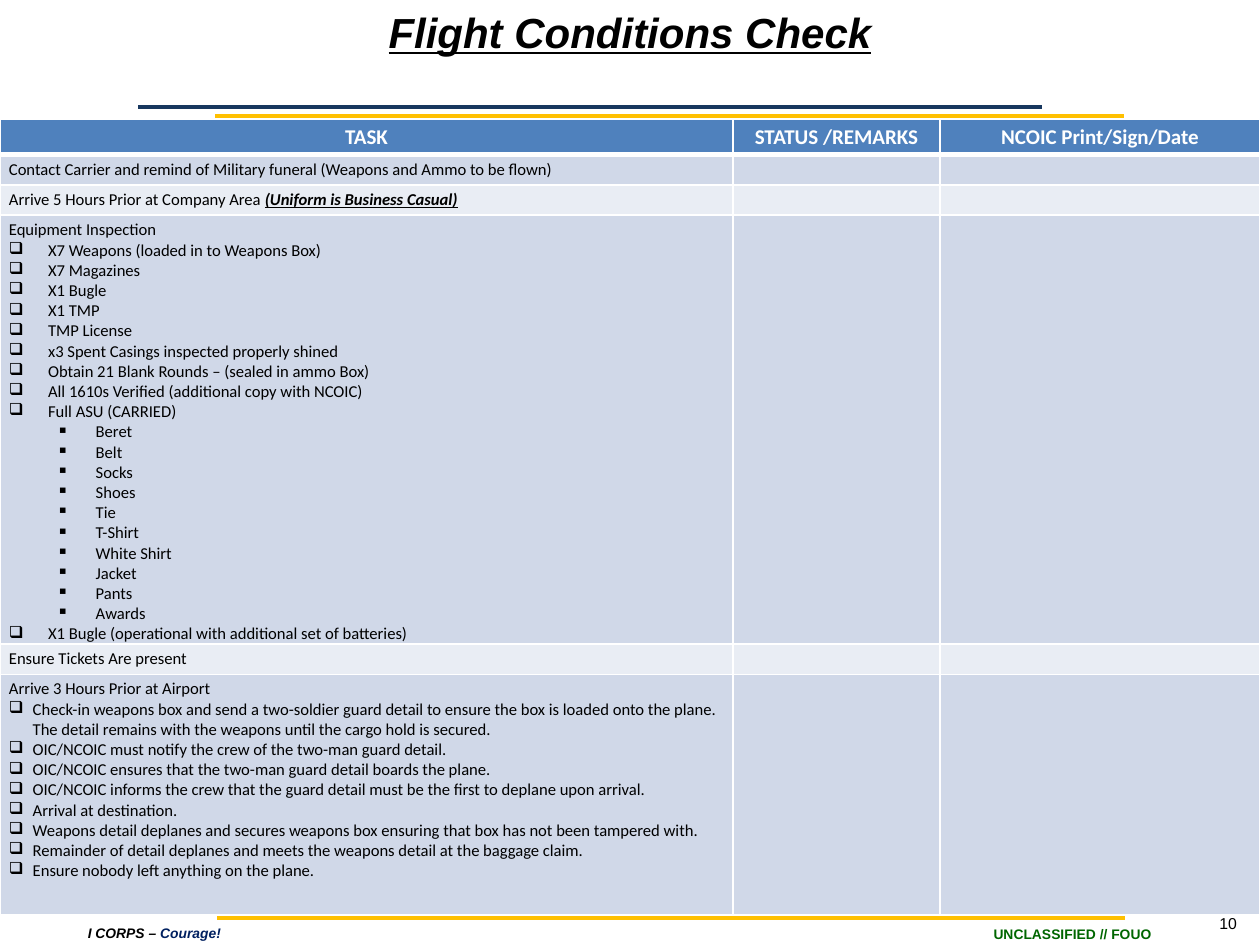
from lxml import etree
from pptx import Presentation
from pptx.dml.color import RGBColor
from pptx.enum.shapes import MSO_CONNECTOR
from pptx.enum.text import MSO_ANCHOR, PP_ALIGN
from pptx.oxml.ns import qn
from pptx.util import Cm, Pt

LINE = MSO_CONNECTOR.STRAIGHT
MIDDLE = MSO_ANCHOR.MIDDLE
LEFT, CENTER = PP_ALIGN.LEFT, PP_ALIGN.CENTER

BLACK = RGBColor(0x00, 0x00, 0x00)
WHITE = RGBColor(0xFF, 0xFF, 0xFF)
NAVY = RGBColor(0x17, 0x37, 0x5E)
GOLD = RGBColor(0xFF, 0xC0, 0x00)
GREEN = RGBColor(0x00, 0x66, 0x00)
INK = RGBColor(0x00, 0x20, 0x60)
BLUE = RGBColor(0x4F, 0x81, 0xBD)
BANDS = [RGBColor(0xD0, 0xD8, 0xE8), RGBColor(0xE9, 0xED, 0xF4)]

TITLE = "Flight Conditions Check"
HEADS = ["TASK", "STATUS /REMARKS", "NCOIC Print/Sign/Date"]

# Each task is a list of (style, text); a trailing third part is emphasised.
KIT = ["X7 Weapons (loaded in to Weapons Box)", "X7 Magazines", "X1 Bugle",
       "X1 TMP", "TMP License", "x3 Spent Casings inspected properly shined",
       "Obtain 21 Blank Rounds – (sealed in ammo Box)",
       "All 1610s Verified (additional copy with NCOIC)",
       "Full ASU (CARRIED)"]
DRESS = ["Beret", "Belt", "Socks", "Shoes", "Tie", "T-Shirt", "White Shirt",
         "Jacket", "Pants", "Awards"]
BUGLE = "X1 Bugle (operational with additional set of batteries)"
AIRPORT = [
    "Check-in weapons box and send a two-soldier guard detail to ensure the "
    "box is loaded onto the plane. The detail remains with the weapons until "
    "the cargo hold is secured.",
    "OIC/NCOIC must notify the crew of the two-man guard detail.",
    "OIC/NCOIC ensures that the two-man guard detail boards the plane.",
    "OIC/NCOIC informs the crew that the guard detail must be the first to "
    "deplane upon arrival.",
    "Arrival at destination.",
    "Weapons detail deplanes and secures weapons box ensuring that box has "
    "not been tampered with.",
    "Remainder of detail deplanes and meets the weapons detail at the "
    "baggage claim.",
    "Ensure nobody left anything on the plane.",
]
TASKS = [
    [("plain", "Contact Carrier and remind of Military funeral "
               "(Weapons and Ammo to be flown)")],
    [("plain", "Arrive 5 Hours Prior at Company Area ",
      "(Uniform is Business Casual)")],
    [("plain", "Equipment Inspection")]
    + [("box", item) for item in KIT]
    + [("square", item) for item in DRESS]
    + [("box", BUGLE)],
    [("plain", "Ensure Tickets Are present")],
    [("plain", "Arrive 3 Hours Prior at Airport")]
    + [("tight", item) for item in AIRPORT],
]

# Style: bullet, left margin and hang in cm, level
BULLETS = {"box": ("❑", 0.79, 0.79, 0), "square": ("▪", 1.75, 0.79, 1),
           "tight": ("❑", 0.48, 0.48, 0)}
COLS = [14.78, 4.17, 6.45]
ROWS = [0.69, 0.61, 0.61, 8.63, 0.61, 4.85]

# Left, right, height in cm
RULES = [(2.84, 21.03, 18.34, NAVY), (4.37, 22.68, 18.5, GOLD),
         (2.79, 21.01, 2.16, NAVY), (4.34, 22.66, 2.33, GOLD)]
# Box in cm, alignment, size, bold, italic, (text, colour) parts
LABELS = [
    ((19.08, 18.67, 5.08, 0.33), CENTER, 7.9, True, False,
     [("UNCLASSIFIED // FOUO", GREEN)]),
    ((1.52, 18.52, 4.75, 0.61), LEFT, 7.9, True, True,
     [("I CORPS – ", BLACK), ("Courage!", INK)]),
    ((24.33, 18.29, 1.07, 0.64), LEFT, 9, False, False, [("10", BLACK)]),
]


def style(font, name, size, color, bold=False, italic=False, under=False):
    font.name, font.size = name, Pt(size)
    font.bold, font.italic, font.underline = bold, italic, under
    font.color.rgb = color


def draw_rule(left, right, y, color):
    rule = slide.shapes.add_connector(LINE, Cm(left), Cm(y), Cm(right), Cm(y))
    rule.line.color.rgb, rule.line.width = color, Pt(2.25)
    etree.SubElement(rule._element.spPr, qn("a:effectLst"))


def add_label(box, align, size, bold, italic, parts):
    frame = slide.shapes.add_textbox(*map(Cm, box)).text_frame
    frame.word_wrap = True
    if align == CENTER:
        frame.vertical_anchor = MIDDLE
        frame.margin_top = frame.margin_bottom = 0
    para = frame.paragraphs[0]
    para.alignment = align
    for text, color in parts:
        run = para.add_run()
        run.text = text
        style(run.font, "Arial", size, color, bold, italic)


def set_bullet(para, mark, margin, hang, level):
    para.level = level
    props = para._p.get_or_add_pPr()
    props.set("marL", str(Cm(margin)))
    props.set("indent", str(-Cm(hang)))
    etree.SubElement(props, qn("a:buChar"), char=mark)


def set_cell(cell, fill, top, bottom):
    """Set the margins, white borders (top and bottom in points) and fill."""
    cell.margin_left = cell.margin_right = Cm(0.18)
    cell.margin_top = cell.margin_bottom = Cm(0.1)
    props = cell._tc.get_or_add_tcPr()
    for side, width in zip("LRTB", (1, 1, top, bottom)):
        edge = etree.SubElement(props, qn("a:ln" + side), w=str(Pt(width)))
        paint = etree.SubElement(edge, qn("a:solidFill"))
        etree.SubElement(paint, qn("a:srgbClr"), val=str(WHITE))
    cell.fill.solid()
    cell.fill.fore_color.rgb = fill


def fill_task(cell, lines):
    frame = cell.text_frame
    for i, (kind, *parts) in enumerate(lines):
        para = frame.add_paragraph() if i else frame.paragraphs[0]
        if kind in BULLETS:
            set_bullet(para, *BULLETS[kind])
        for j, text in enumerate(parts):
            run = para.add_run()
            run.text = text
            strong = j > 0
            style(run.font, "Calibri", 9.5, BLACK, strong, strong, strong)


deck = Presentation()
deck.slide_width, deck.slide_height = Cm(25.4), Cm(19.05)
slide = deck.slides.add_slide(deck.slide_layouts[5])

for rule in RULES:
    draw_rule(*rule)
for label in LABELS:
    add_label(*label)

title = slide.shapes.title
title.left, title.top, title.width, title.height = 0, 0, Cm(25.4), Cm(1.27)
title.text_frame.text = TITLE
title.text_frame.vertical_anchor = MIDDLE
head = title.text_frame.paragraphs[0]
head.alignment = CENTER
style(head.runs[0].font, "Arial", 24, BLACK, True, True, True)

table = slide.shapes.add_table(len(ROWS), len(COLS), 0, Cm(2.41),
                               Cm(sum(COLS)), Cm(sum(ROWS))).table
for col, width in zip(table.columns, COLS):
    col.width = Cm(width)
for row, height in zip(table.rows, ROWS):
    row.height = Cm(height)

for cell, text in zip(table.rows[0].cells, HEADS):
    set_cell(cell, BLUE, 1, 3)
    cell.text_frame.text = text
    para = cell.text_frame.paragraphs[0]
    para.alignment = CENTER
    style(para.runs[0].font, "Calibri", 12, WHITE, True)

for i, lines in enumerate(TASKS):
    cells = list(table.rows[i + 1].cells)
    for cell in cells:
        set_cell(cell, BANDS[i % 2], 1 if i else 3, 1)
    fill_task(cells[0], lines)
    for cell in cells[1:]:
        blank = cell.text_frame.paragraphs[0]._p
        etree.SubElement(blank, qn("a:endParaRPr"), sz="950")

deck.save("out.pptx")
